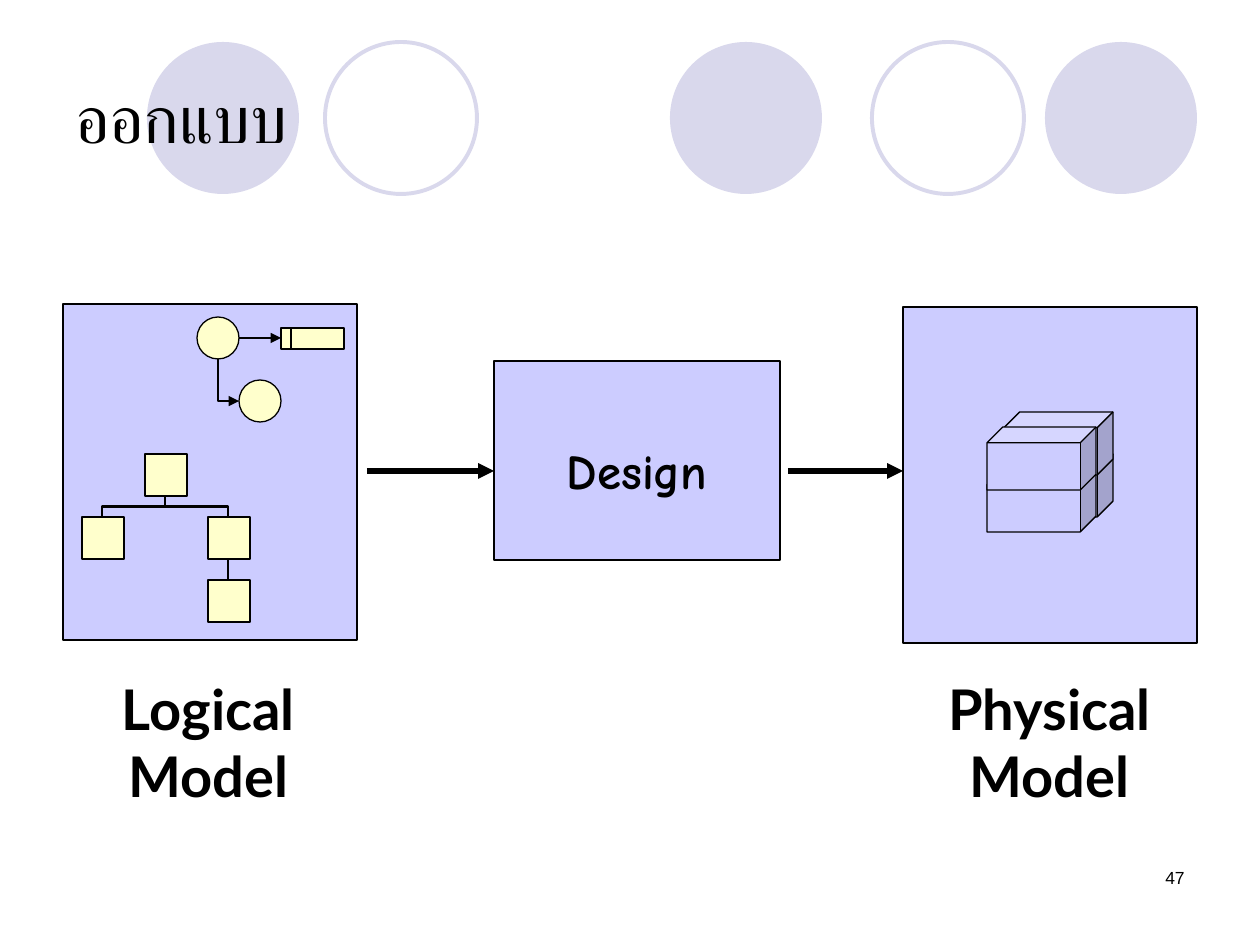
from lxml.etree import SubElement
from pptx import Presentation
from pptx.dml.color import RGBColor
from pptx.enum.shapes import MSO_CONNECTOR, MSO_SHAPE
from pptx.enum.text import MSO_ANCHOR, PP_ALIGN
from pptx.oxml.ns import qn
from pptx.util import Pt

EMU_PER_PX = 914400 / 126
BLACK = RGBColor(0x00, 0x00, 0x00)
PANEL = RGBColor(0xCC, 0xCC, 0xFF)
NODE = RGBColor(0xFF, 0xFF, 0xCC)
ORNAMENT = RGBColor(0xD9, 0xD8, 0xEC)
PADDING = 6


def px(length):
    return round(length * EMU_PER_PX)


def write(frame, text, size=18, font="Arial", bold=False, align=PP_ALIGN.LEFT,
          anchor=MSO_ANCHOR.TOP, wrap=True, top=PADDING):
    """Fill a text frame; a newline in the text is a line break."""
    frame.word_wrap = wrap
    frame.vertical_anchor = anchor
    frame.margin_top = px(top)
    frame.margin_bottom = px(PADDING)
    para = frame.paragraphs[0]
    para.alignment = align
    for index, line in enumerate(text.split("\n")):
        if index:
            para.add_line_break()
        span = para.add_run()
        span.text = line
        span.font.size = Pt(size)
        span.font.name = font
        span.font.bold = bold
        span.font.color.rgb = BLACK


class Canvas:
    """The current page and the style of its elements."""

    def __init__(self, page):
        self.shapes = page.shapes

    def shape(self, kind, left, top, width, height, fill=None, line=BLACK, weight=0.75):
        shape = self.shapes.add_shape(kind, px(left), px(top), px(width), px(height))
        shape.shadow.inherit = False
        if fill is None:
            shape.fill.background()
        else:
            shape.fill.solid()
            shape.fill.fore_color.rgb = fill
        if line is None:
            shape.line.fill.background()
        else:
            shape.line.color.rgb = line
            shape.line.width = Pt(weight)
        return shape

    def text(self, text, left, top, width, height, **style):
        box = self.shapes.add_textbox(px(left), px(top), px(width), px(height))
        write(box.text_frame, text, **style)

    def line(self, start, end, weight=1.5, arrow=False, kind=MSO_CONNECTOR.STRAIGHT):
        line = self.shapes.add_connector(kind, *map(px, start + end))
        line.line.color.rgb = BLACK
        line.line.width = Pt(weight)
        if arrow:
            SubElement(line.line._get_or_add_ln(), qn("a:tailEnd"), type="triangle")
        SubElement(line._element.spPr, qn("a:effectLst"))
        return line

    def elbow_down(self, start, end, preset="bentConnector3", arrow=False):
        """Bent connector that leaves its start downwards, as a turned horizontal one."""
        (x1, y1), (x2, y2) = start, end
        middle_x, middle_y = (x1 + x2) / 2, (y1 + y2) / 2
        half_width, half_height = (y2 - y1) / 2, abs(x2 - x1) / 2
        rightward = x2 > x1
        if rightward:
            half_width = -half_width
        line = self.line((middle_x - half_width, middle_y - half_height),
                         (middle_x + half_width, middle_y + half_height),
                         arrow=arrow, kind=MSO_CONNECTOR.ELBOW)
        properties = line._element.spPr
        properties.find(qn("a:xfrm")).set("rot", str((270 if rightward else 90) * 60000))
        properties.find(qn("a:prstGeom")).set("prst", preset)


def draw_header(canvas):
    for left in (670, 1045, 147):
        canvas.shape(MSO_SHAPE.OVAL, left, 42, 152, 152, fill=ORNAMENT, line=None)
    for left in (872, 325):
        canvas.shape(MSO_SHAPE.OVAL, left, 42, 152, 152, line=ORNAMENT, weight=2.25)
    canvas.text("47", 903, 861, 294, 63, size=10, align=PP_ALIGN.RIGHT)
    canvas.text("ออกแบบ", 63, 38, 1134, 158, size=38, anchor=MSO_ANCHOR.MIDDLE)


def draw_process(canvas):
    design = canvas.shape(MSO_SHAPE.RECTANGLE, 494, 361, 286, 199, fill=PANEL)
    write(design.text_frame, "Design", size=28, font="Comic Neue", bold=True,
          align=PP_ALIGN.CENTER, anchor=MSO_ANCHOR.MIDDLE, top=24)
    for start, end in ((367, 494), (788, 903)):
        canvas.line((start, 471), (end, 471), weight=3, arrow=True)


def draw_logical_model(canvas):
    canvas.shape(MSO_SHAPE.RECTANGLE, 63, 304, 294, 336, fill=PANEL)
    node = 42
    for left, top in ((197, 317), (239, 380)):
        canvas.shape(MSO_SHAPE.OVAL, left, top, node, node, fill=NODE)
    canvas.shape(MSO_SHAPE.FLOWCHART_PROCESS, 281, 328, 63, 21, fill=NODE)
    canvas.line((291, 328), (291, 349), weight=0.75)
    canvas.elbow_down((218, 359), (239, 401), preset="bentConnector2", arrow=True)
    canvas.line((239, 338), (281, 338), arrow=True)

    step = 63
    for column, row in ((1, 0), (0, 1), (2, 1), (2, 2)):
        canvas.shape(MSO_SHAPE.RECTANGLE, 82 + column * step, 454 + row * step,
                     node, node, fill=NODE)
    for child in (102, 228):
        canvas.elbow_down((165, 496), (child, 517))
    canvas.line((228, 559), (228, 580))


def draw_physical_model(canvas):
    canvas.shape(MSO_SHAPE.RECTANGLE, 903, 307, 294, 336, fill=PANEL)
    for top in (454, 412):
        for left, drop in ((1004, 0), (987, 15)):
            canvas.shape(MSO_SHAPE.CUBE, left, top + drop, 109, 63, fill=PANEL)


def main():
    deck = Presentation()
    deck.slide_width, deck.slide_height = px(1260), px(945)
    page = deck.slides.add_slide(deck.slide_layouts[6])
    canvas = Canvas(page)
    draw_header(canvas)
    draw_process(canvas)
    draw_logical_model(canvas)
    draw_physical_model(canvas)
    for label, left, width in (("Logical\nModel", 82, 253), ("Physical\nModel", 912, 275)):
        canvas.text(label, left, 668, width, 79, size=32, font="Lato", bold=True,
                    align=PP_ALIGN.CENTER, wrap=False)
    deck.save("out.pptx")


if __name__ == "__main__":
    main()
